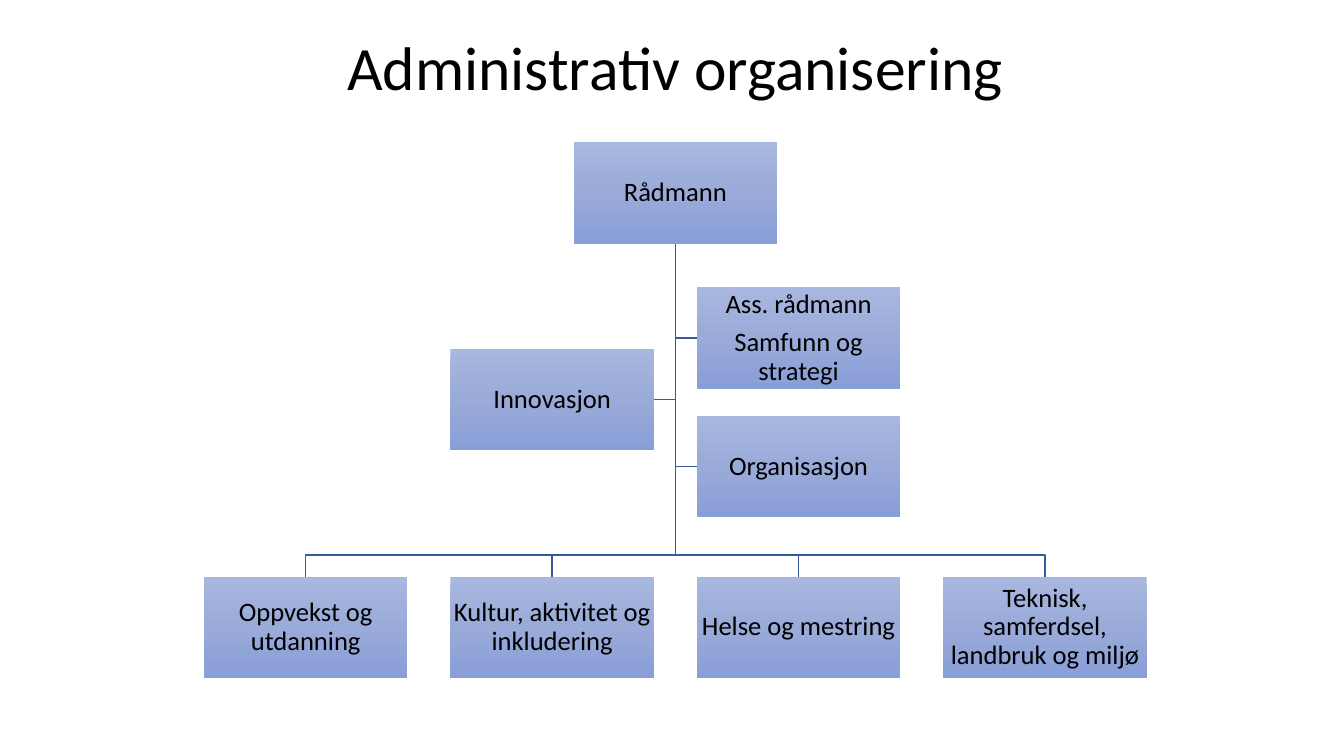
from copy import deepcopy
from dataclasses import dataclass

from pptx import Presentation
from pptx.dml.color import RGBColor
from pptx.enum.shapes import MSO_SHAPE
from pptx.enum.text import MSO_ANCHOR, PP_ALIGN
from pptx.oxml.ns import qn
from pptx.shapes.autoshape import Shape
from pptx.slide import Slide
from pptx.text.text import TextFrame
from pptx.util import Cm, Pt

COLOURS = {
    "text": "000000",
    "line": "365B9D",
    "light": "A8B7DF",
    "middle": "9AABD9",
    "dark": "889ED7",
}
FONT = "Calibri"

# All lengths in centimetres
BOX_WIDTH, BOX_HEIGHT = 5.13, 2.56
FIRST_COLUMN, COLUMN_PITCH = 5.14, 6.21
TRUNK_X = FIRST_COLUMN + (3 * COLUMN_PITCH + BOX_WIDTH) / 2
UNIT_TOP, BAR_Y = 14.53, 13.99
INSET = 0.03

Point = tuple[float, float]


@dataclass(frozen=True)
class Office:
    """A box in the chart, placed by column (0 to 3) and top edge."""
    label: str
    column: float
    top: float

    @property
    def left(self) -> float:
        return FIRST_COLUMN + self.column * COLUMN_PITCH

    @property
    def centre_x(self) -> float:
        return self.left + BOX_WIDTH / 2

    @property
    def centre_y(self) -> float:
        return self.top + BOX_HEIGHT / 2


LEADER = Office("Rådmann", 1.5, 3.58)
STAFF = [
    Office("Innovasjon", 1, 8.79),
    Office("Ass. rådmann\nSamfunn og strategi", 2, 7.24),
    Office("Organisasjon", 2, 10.48),
]
UNITS = [
    Office(label, column, UNIT_TOP)
    for column, label in enumerate([
        "Oppvekst og utdanning",
        "Kultur, aktivitet og inkludering",
        "Helse og mestring",
        "Teknisk, samferdsel, landbruk og miljø",
    ])
]


def colour(name: str) -> RGBColor:
    return RGBColor.from_string(COLOURS[name])


def format_text(frame: TextFrame, size: float, space_after: float = 0) -> None:
    frame.word_wrap = True
    frame.vertical_anchor = MSO_ANCHOR.MIDDLE
    for paragraph in frame.paragraphs:
        paragraph.alignment = PP_ALIGN.CENTER
        paragraph.line_spacing = 0.9
        paragraph.space_after = Pt(space_after)
        for run in paragraph.runs:
            run.font.name = FONT
            run.font.size = Pt(size)
            run.font.color.rgb = colour("text")


def add_title(slide: Slide, wording: str) -> None:
    title = slide.shapes.title
    title.left, title.top, title.width, title.height = Cm(3.05), Cm(0.79), Cm(27.94), Cm(1.96)
    title.text_frame.text = wording
    format_text(title.text_frame, 44)


def fill_with_gradient(box: Shape) -> None:
    """Fill from light at the top, through a middle stop, to dark at the bottom."""
    box.fill.gradient()
    box.fill.gradient_angle = 270
    stop_list = box.element.spPr.find(qn("a:gradFill")).find(qn("a:gsLst"))
    middle_stop = deepcopy(stop_list[0])
    middle_stop.set("pos", "50000")
    stop_list.insert(1, middle_stop)
    for stop, name in zip(box.fill.gradient_stops, ("light", "middle", "dark")):
        stop.color.rgb = colour(name)


def add_office(slide: Slide, office: Office) -> None:
    box = slide.shapes.add_shape(
        MSO_SHAPE.RECTANGLE, Cm(office.left), Cm(office.top), Cm(BOX_WIDTH), Cm(BOX_HEIGHT))
    box.shadow.inherit = False
    box.line.fill.background()
    fill_with_gradient(box)
    frame = box.text_frame
    frame.margin_left = frame.margin_right = Cm(INSET)
    frame.margin_top = frame.margin_bottom = Cm(INSET)
    frame.text = office.label
    format_text(frame, 19, space_after=6.65)


def add_branch(slide: Slide, corners: list[Point]) -> None:
    """Draw an angled line from the leader's box through the corners."""
    builder = slide.shapes.build_freeform(Cm(TRUNK_X), Cm(LEADER.top + BOX_HEIGHT))
    builder.add_line_segments([(Cm(x), Cm(y)) for x, y in corners], close=False)
    branch = builder.convert_to_shape()
    branch.shadow.inherit = False
    branch.fill.background()
    branch.line.color.rgb = colour("line")
    branch.line.width = Pt(1)


def staff_corners(office: Office) -> list[Point]:
    side_x = office.left if office.centre_x > TRUNK_X else office.left + BOX_WIDTH
    return [(TRUNK_X, office.centre_y), (side_x, office.centre_y)]


def unit_corners(unit: Office) -> list[Point]:
    return [(TRUNK_X, BAR_Y), (unit.centre_x, BAR_Y), (unit.centre_x, unit.top)]


def main() -> None:
    presentation = Presentation()
    presentation.slide_width, presentation.slide_height = Cm(33.87), Cm(19.05)
    slide = presentation.slides.add_slide(presentation.slide_layouts[5])
    add_title(slide, "Administrativ organisering")
    for office in STAFF:
        add_branch(slide, staff_corners(office))
    for unit in reversed(UNITS):
        add_branch(slide, unit_corners(unit))
    for office in [LEADER, *UNITS, *reversed(STAFF)]:
        add_office(slide, office)
    presentation.save("out.pptx")


if __name__ == "__main__":
    main()
